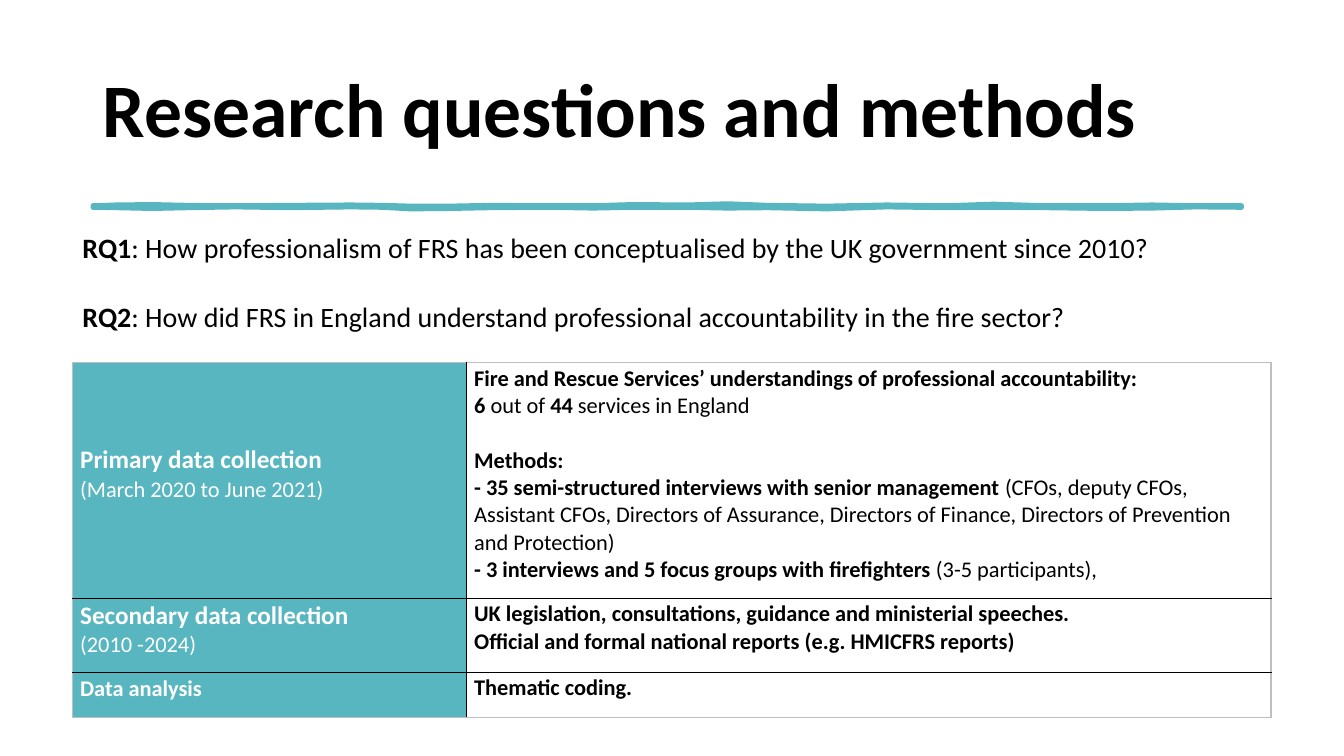
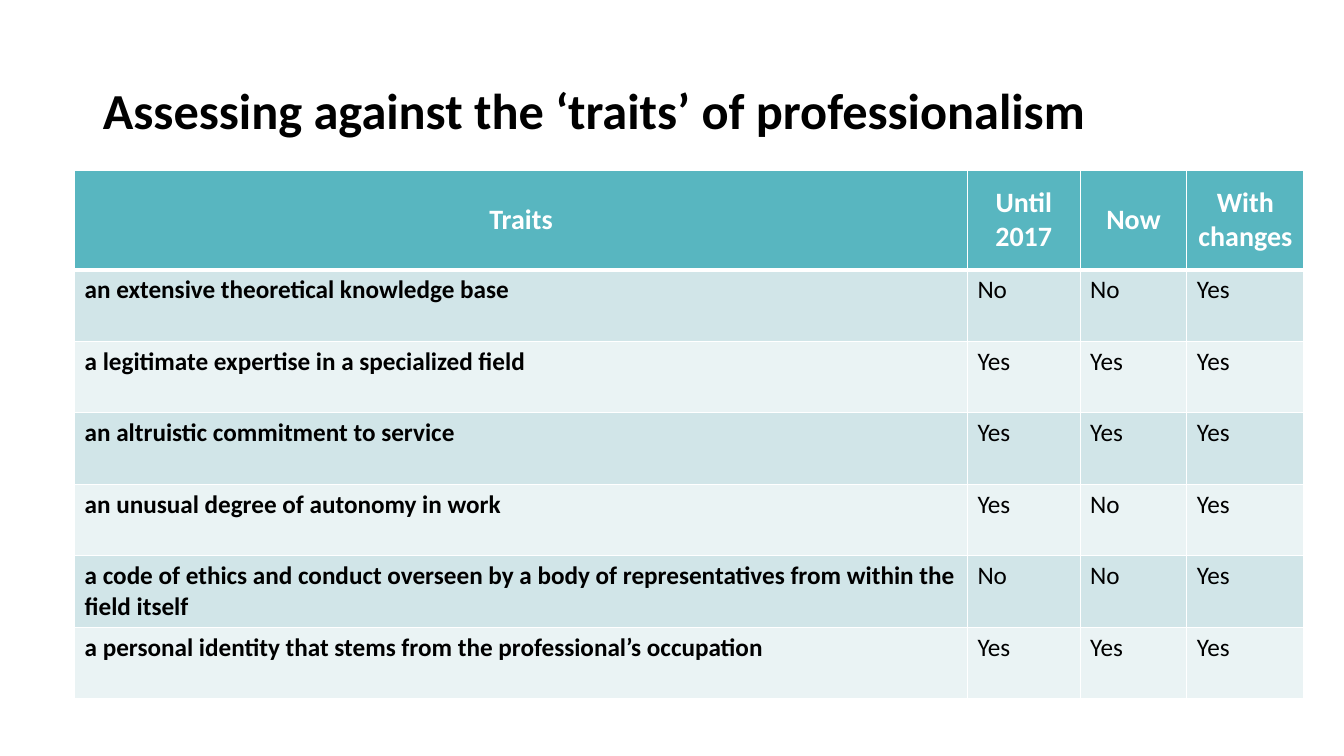
from typing import NamedTuple

from lxml.etree import SubElement
from pptx import Presentation
from pptx.dml.color import RGBColor
from pptx.enum.text import MSO_ANCHOR as Anchor, MSO_AUTO_SIZE as AutoSize, PP_ALIGN as Align
from pptx.oxml.ns import qn
from pptx.util import Cm, Pt

FONT = "Calibri"
TEAL, TEAL_LIGHT, TEAL_PALE = "58B6C0", "D1E5E8", "EAF3F4"
BLACK, WHITE, GREY = "000000", "FFFFFF", "BFBFBF"
TITLE_ONLY = 5

TITLE_BOX = dict(left=Cm(2.34), top=Cm(1.02), width=Cm(29.21), height=Cm(3.68))
TITLE_FRAME = dict(word_wrap=True, auto_size=AutoSize.NONE, vertical_anchor=Anchor.MIDDLE)
TITLE_PARAGRAPH = dict(alignment=Align.LEFT, line_spacing=0.9)
PLAIN_TABLE = dict(first_row=False, horz_banding=False)
METHOD_CELL = dict(margin_left=Cm(0.19), margin_top=Cm(0.05),
                   margin_right=Cm(0.36), margin_bottom=Cm(0.38))

# Brush stroke: distance from its left end, upper edge, lower edge (cm)
STROKE_EDGES = [
    (0, 5.18, 5.23), (0.6, 5.16, 5.24), (1.5, 5.15, 5.26), (2.4, 5.17, 5.24),
    (3.6, 5.18, 5.22), (5, 5.17, 5.24), (6.5, 5.16, 5.22), (7.3, 5.17, 5.23),
    (8, 5.19, 5.27), (9, 5.19, 5.26), (10, 5.17, 5.24), (11.5, 5.18, 5.23),
    (12.6, 5.18, 5.25), (13.6, 5.15, 5.23), (15, 5.16, 5.23), (16, 5.13, 5.25),
    (17, 5.17, 5.24), (18.5, 5.19, 5.27), (20, 5.16, 5.22), (21.5, 5.18, 5.24),
    (22.7, 5.14, 5.23), (24, 5.18, 5.24), (25.5, 5.18, 5.26), (26.7, 5.16, 5.25),
    (27.8, 5.18, 5.22), (28.95, 5.18, 5.23),
]

QUESTIONS = [
    "**RQ1**: How professionalism of FRS has been conceptualised by the UK government since 2010?",
    "**RQ2**: How did FRS in England understand professional accountability in the fire sector?",
]

TRAIT_HEADINGS = ["Traits", "Until 2017", "Now", "With changes"]
TRAITS = [
    ("an extensive theoretical knowledge base", "No", "No", "Yes"),
    ("a legitimate expertise in a specialized field", "Yes", "Yes", "Yes"),
    ("an altruistic commitment to service", "Yes", "Yes", "Yes"),
    ("an unusual degree of autonomy in work", "Yes", "No", "Yes"),
    ("a code of ethics and conduct overseen by a body of representatives "
     "from within the field itself", "No", "No", "Yes"),
    ("a personal identity that stems from the professional’s occupation", "Yes", "Yes", "Yes"),
]


class Para(NamedTuple):
    """One paragraph; parts between double asterisks are bold."""
    text: str
    size: float = 16
    color: str = BLACK
    format: dict = {}


METHODS = [
    ([Para("**Primary data collection**", 18, WHITE),
      Para("(March 2020 to June 2021)", color=WHITE)],
     [Para("**Fire and Rescue Services’ understandings of professional accountability:**"),
      Para("**6** out of **44** services in England"),
      Para("**Methods:**", format=dict(space_before=Pt(19.5))),
      Para("**- 35 semi-structured interviews with senior management **(CFOs, deputy CFOs, "
           "Assistant CFOs, Directors of Assurance, Directors of Finance, "
           "Directors of Prevention and Protection)"),
      Para("**- 3 interviews and 5 focus groups with firefighters **(3-5 participants),")]),
    ([Para("**Secondary data collection**", 18, WHITE),
      Para("(2010 -2024)", color=WHITE)],
     [Para("**UK legislation, consultations, guidance and ministerial speeches.**"),
      Para("**Official and formal national reports (e.g. HMICFRS reports)**")]),
    ([Para("**Data analysis**", color=WHITE)],
     [Para("**Thematic coding.**")]),
]


def rgb(hex_color):
    return RGBColor.from_string(hex_color)


def apply_format(target, values):
    for attribute, value in values.items():
        setattr(target, attribute, value)


def fill_solid(target, color):
    target.fill.solid()
    target.fill.fore_color.rgb = rgb(color)


def write(frame, paras):
    for index, para in enumerate(paras):
        paragraph = frame.add_paragraph() if index else frame.paragraphs[0]
        apply_format(paragraph, para.format)
        for part, text in enumerate(para.text.split("**")):
            if text:
                run = paragraph.add_run()
                run.text = text
                apply_format(run.font, dict(name=FONT, size=Pt(para.size), bold=part % 2 == 1))
                run.font.color.rgb = rgb(para.color)


def add_titled_slide(deck, title, size):
    slide = deck.slides.add_slide(deck.slide_layouts[TITLE_ONLY])
    heading = slide.shapes.title
    apply_format(heading, TITLE_BOX)
    apply_format(heading.text_frame, TITLE_FRAME)
    write(heading.text_frame, [Para(f"**{title}**", size, format=TITLE_PARAGRAPH)])
    return slide


def add_question(slide, text, top):
    box = slide.shapes.add_textbox(Cm(1.83), top, Cm(30.2), Cm(1.12))
    box.text_frame.word_wrap = True
    write(box.text_frame, [Para(text, 20, format=dict(space_after=Pt(6)))])


def add_brush_stroke(slide):
    upper = [(Cm(2.34 + x), Cm(top)) for x, top, _ in STROKE_EDGES]
    lower = [(Cm(2.34 + x), Cm(bottom)) for x, _, bottom in reversed(STROKE_EDGES)]
    builder = slide.shapes.build_freeform(*upper[0])
    builder.add_line_segments(upper[1:] + lower, close=True)
    stroke = builder.convert_to_shape()
    stroke.shadow.inherit = False
    fill_solid(stroke, TEAL)
    fill_solid(stroke.line, TEAL)
    stroke.line.width = Pt(3.25)
    SubElement(stroke.line._get_or_add_ln(), qn("a:round"))


def add_plain_table(slide, left, top, widths, heights):
    """Add an unbanded table with column widths and row heights in cm."""
    table = slide.shapes.add_table(len(heights), len(widths), Cm(left), Cm(top),
                                   Cm(sum(widths)), Cm(sum(heights))).table
    apply_format(table, PLAIN_TABLE)
    for column, width in zip(table.columns, widths):
        column.width = Cm(width)
    for row, height in zip(table.rows, heights):
        row.height = Cm(height)
    return table


def set_borders(cell, borders):
    """Draw the sides in borders, which maps L, R, T, B to (colour, points)."""
    properties = cell._tc.get_or_add_tcPr()
    for index, side in enumerate("LRTB"):
        color, points = borders[side]
        line = SubElement(properties, qn(f"a:ln{side}"), w=str(Pt(points)))
        SubElement(SubElement(line, qn("a:solidFill")), qn("a:srgbClr"), val=color)
        properties.insert(index, line)


def fill_cell(cell, paras, fill, borders, anchor=Anchor.TOP):
    fill_solid(cell, fill)
    cell.vertical_anchor = anchor
    write(cell.text_frame, paras)
    set_borders(cell, borders)


def add_methods_table(slide):
    table = add_plain_table(slide, 1.83, 9.14, [9.93, 20.27], [5.94, 1.83, 1.14])
    inner, outer = (BLACK, 1), (GREY, 1)
    last = len(METHODS) - 1
    for row, (stage, details) in enumerate(METHODS):
        top, bottom = (outer if row == edge else inner for edge in (0, last))
        columns = [(stage, TEAL, Anchor.MIDDLE, outer, inner),
                   (details, WHITE, Anchor.TOP, inner, outer)]
        for column, (paras, fill, anchor, left, right) in enumerate(columns):
            cell = table.cell(row, column)
            apply_format(cell, METHOD_CELL)
            fill_cell(cell, paras, fill, dict(L=left, R=right, T=top, B=bottom), anchor)


def add_traits_table(slide):
    table = add_plain_table(slide, 1.88, 4.29, [22.5, 2.84, 2.69, 2.95],
                            [2.51] + [1.8] * len(TRAITS))
    thin, thick = (WHITE, 1), (WHITE, 3)
    centred = dict(alignment=Align.CENTER)
    for column, heading in enumerate(TRAIT_HEADINGS):
        fill_cell(table.cell(0, column), [Para(f"**{heading}**", 20, WHITE, centred)],
                  TEAL, dict(L=thin, R=thin, T=thin, B=thick), Anchor.MIDDLE)
    for row, (trait, *answers) in enumerate(TRAITS, 1):
        borders = dict(L=thin, R=thin, T=thick if row == 1 else thin, B=thin)
        for column, text in enumerate([f"**{trait}**", *answers]):
            fill_cell(table.cell(row, column), [Para(text, 18)],
                      TEAL_LIGHT if row % 2 else TEAL_PALE, borders)


def main():
    deck = Presentation()
    apply_format(deck, dict(slide_width=Cm(33.87), slide_height=Cm(19.05)))

    methods = add_titled_slide(deck, "Research questions and methods", 54)
    add_brush_stroke(methods)
    for index, question in enumerate(QUESTIONS):
        add_question(methods, question, Cm(5.69 + 1.73 * index))
    add_methods_table(methods)

    traits = add_titled_slide(deck, "Assessing against the ‘traits’ of professionalism", 36)
    add_traits_table(traits)

    deck.save("out.pptx")


if __name__ == "__main__":
    main()
